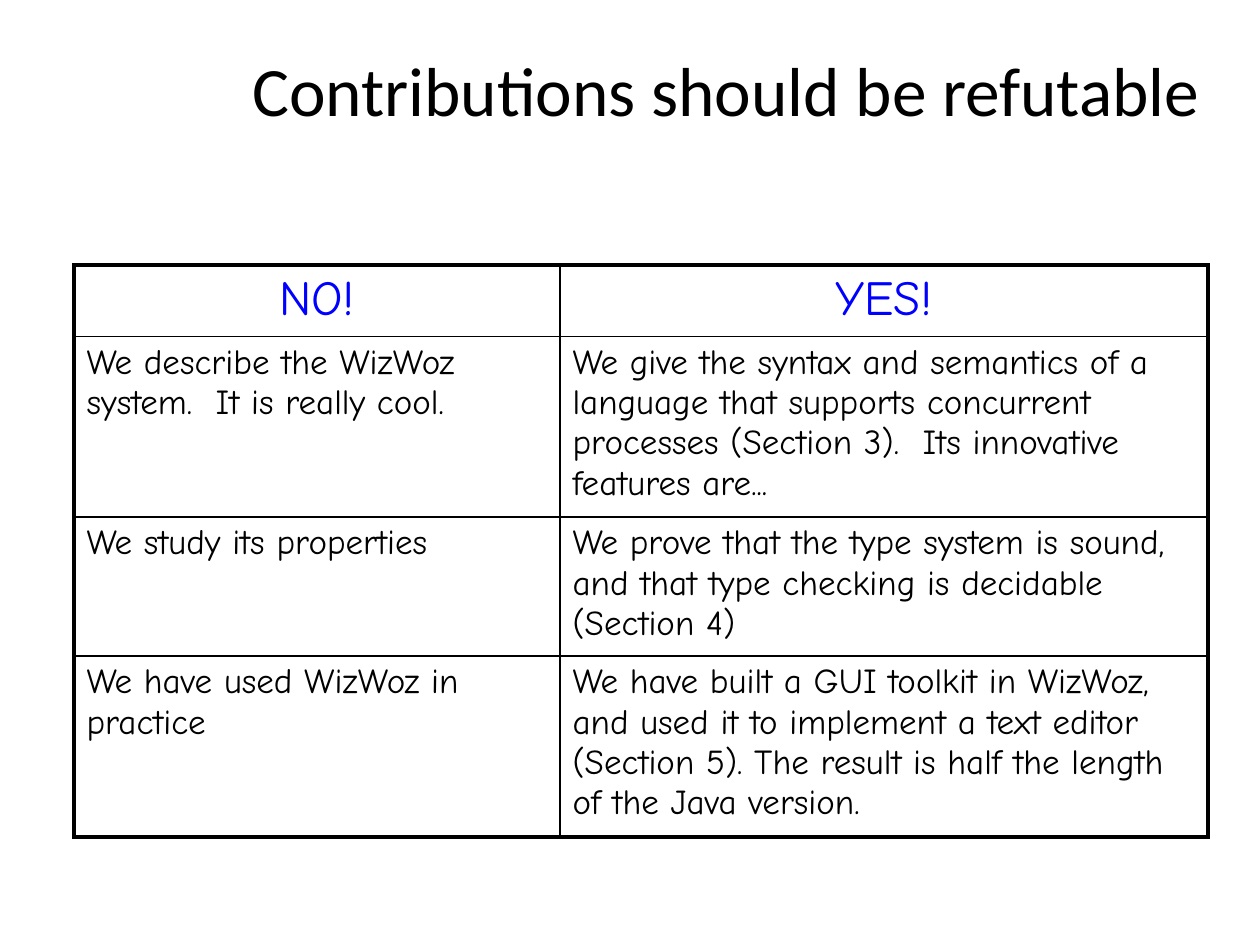
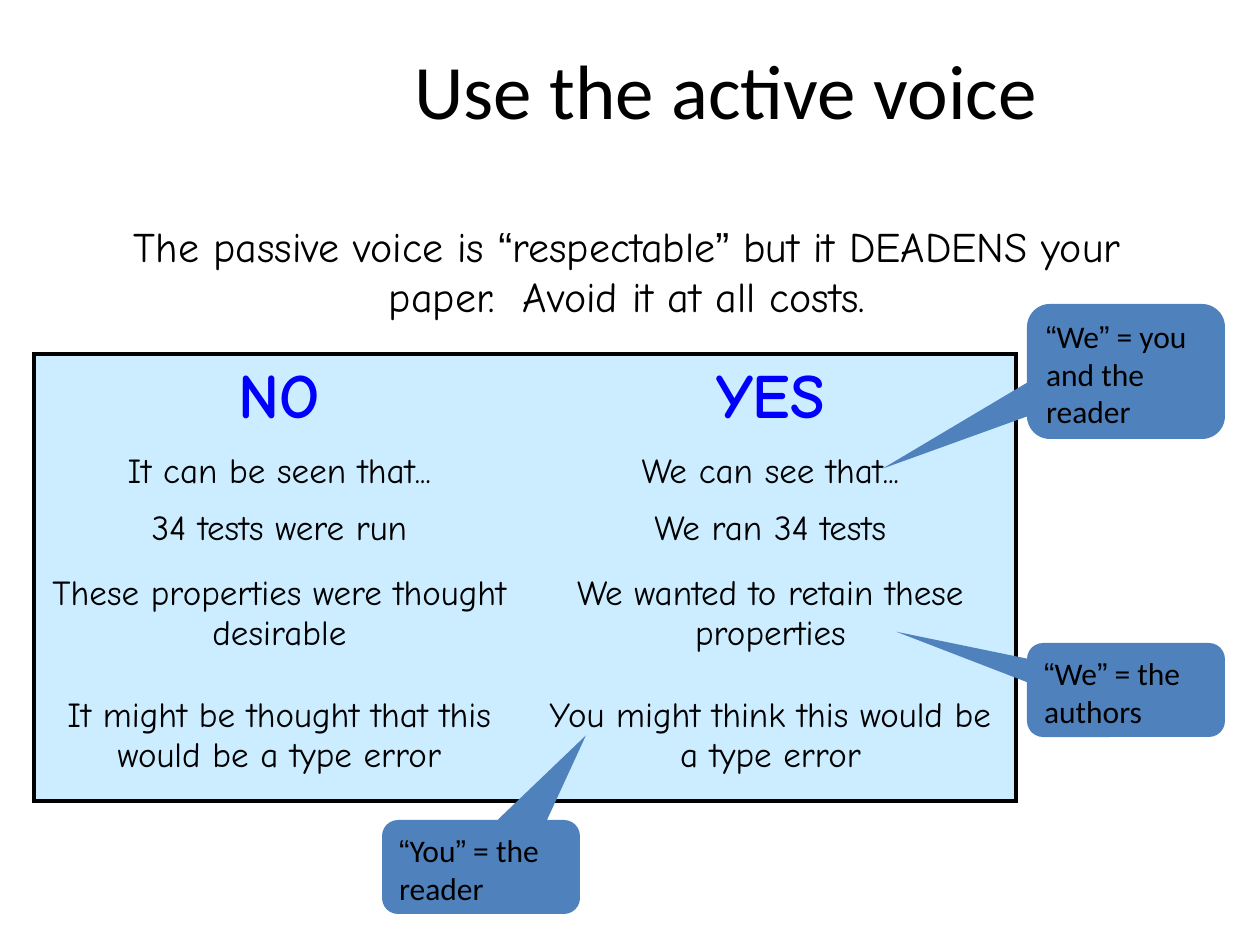
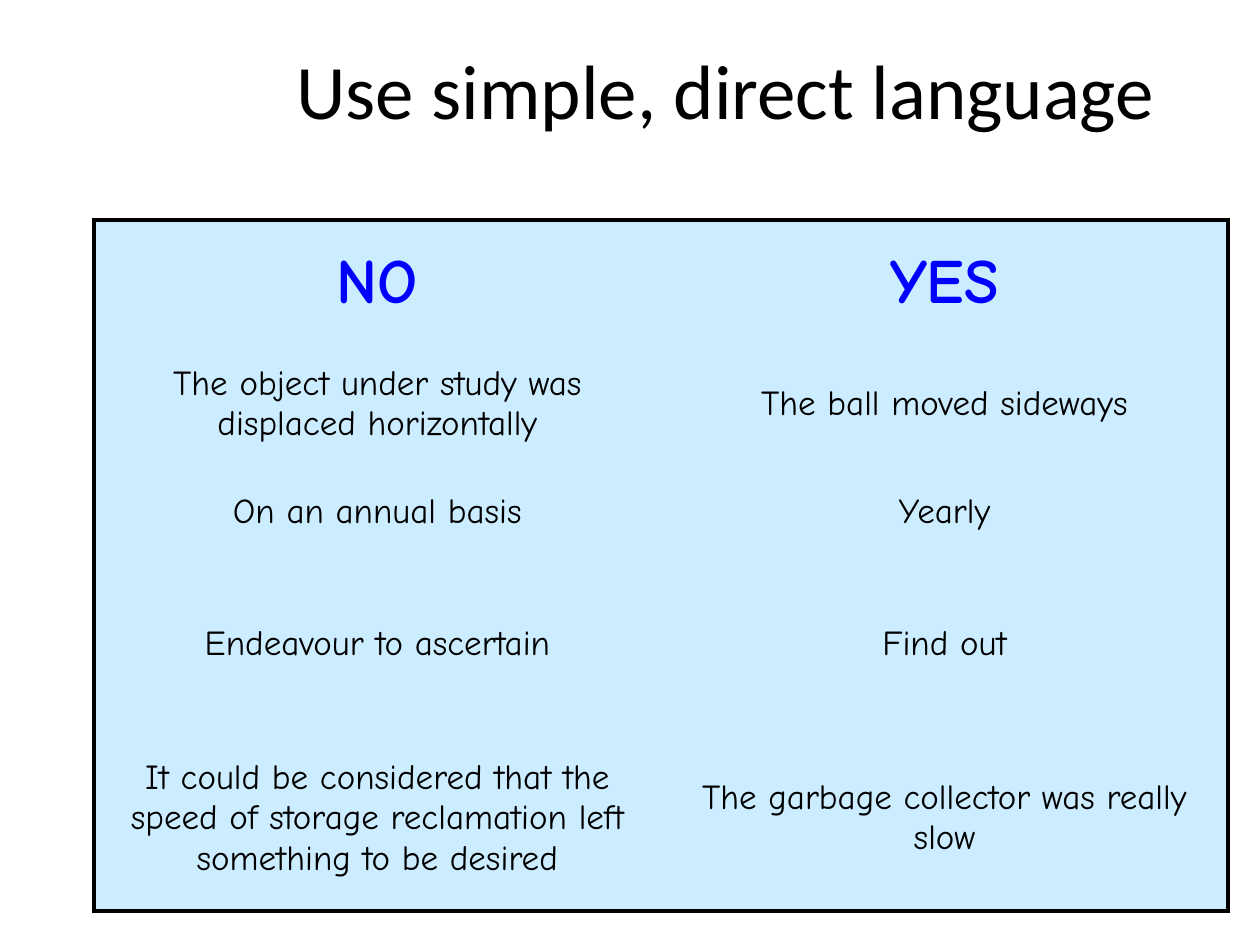
from itertools import groupby

from lxml.etree import SubElement
from pptx import Presentation
from pptx.dml.color import RGBColor
from pptx.enum.shapes import MSO_SHAPE
from pptx.enum.text import MSO_ANCHOR, PP_ALIGN
from pptx.oxml.ns import qn
from pptx.util import Pt

PX = 914400 / 126
BLACK = RGBColor(0x00, 0x00, 0x00)
HEADING_BLUE = RGBColor(0x00, 0x00, 0xFF)
PALE_BLUE = RGBColor(0xCC, 0xEC, 0xFF)
CALLOUT_BLUE = RGBColor(0x4F, 0x81, 0xBD)

TITLE_FONT = "Calibri"
BODY_FONT = "Comic Neue"
QUOTE_FONT = "Arial"
QUOTES = "“”"

TITLE_BOX = (189, 10, 1074, 158)
THICK, THIN = 2.25, 1

REFUTABLE_ROWS = [
    ("NO!", "YES!"),
    ("We describe the WizWoz system.  It is really cool.",
     "We give the syntax and semantics of a language that supports concurrent "
     "processes (Section 3).  Its innovative features are..."),
    ("We study its properties",
     "We prove that the type system is sound, and that type checking is "
     "decidable (Section 4)"),
    ("We have used WizWoz in practice",
     "We have built a GUI toolkit in WizWoz, and used it to implement a text "
     "editor (Section 5). The result is half the length of the Java version."),
]
VOICE_ROWS = [
    ("NO", "YES"),
    ("It can be seen that...", "We can see that..."),
    ("34 tests were run", "We ran 34 tests"),
    ("These properties were thought desirable",
     "We wanted to retain these properties"),
    ("It might be thought that this would be a type error",
     "You might think this would be a type error"),
]
LANGUAGE_ROWS = [
    ("NO", "YES"),
    ("The object under study was displaced horizontally",
     "The ball moved sideways"),
    ("On an annual basis", "Yearly"),
    ("Endeavour to ascertain", "Find out"),
    ("It could be considered that the speed of storage reclamation left "
     "something to be desired",
     "The garbage collector was really slow"),
]
# box, adjustments of the tip and corner, text
CALLOUTS = [
    ((1027, 304, 198, 135), (-1.23, 0.72, 0.17), "“We” = you and the reader"),
    ((1027, 643, 198, 94), (-1.16, -0.62, 0.17), "“We” = the authors"),
    ((382, 820, 198, 94), (0.53, -1.4, 0.17), "“You” = the reader"),
]


def px(n):
    return round(n * PX)


def emu(box):
    return [px(n) for n in box]


def style_run(r, font, size, color=BLACK, bold=False):
    r.font.name = font
    r.font.size = Pt(size)
    r.font.color.rgb = color
    r.font.bold = bold


def add_quoted(p, text, font, size):
    """Write text as runs, with the curly quotes in their own font."""
    for is_quote, chars in groupby(text, lambda ch: ch in QUOTES):
        r = p.add_run()
        r.text = "".join(chars)
        style_run(r, QUOTE_FONT if is_quote else font, size)


def add_textbox(slide, box, anchor):
    tf = slide.shapes.add_textbox(*emu(box)).text_frame
    tf.word_wrap = True
    tf.vertical_anchor = anchor
    p = tf.paragraphs[0]
    p.alignment = PP_ALIGN.CENTER
    return p


def add_title(slide, text, size=44):
    p = add_textbox(slide, TITLE_BOX, MSO_ANCHOR.MIDDLE)
    p.text = text
    style_run(p.runs[0], TITLE_FONT, size)


def set_borders(cell, widths):
    """Draw the left, right, top and bottom borders; a width of 0 hides one."""
    tc_pr = cell._tc.get_or_add_tcPr()
    for i, (side, width) in enumerate(zip("LRTB", widths)):
        ln = SubElement(tc_pr, qn(f"a:ln{side}"), w=str(int(Pt(width))))
        if width:
            fill = SubElement(ln, qn("a:solidFill"))
            SubElement(fill, qn("a:srgbClr"), val=str(BLACK))
        else:
            SubElement(ln, qn("a:noFill"))
        tc_pr.insert(i, ln)


def add_comparison(slide, left, top, cols, heights, rows, heading_size,
                   heading_bold=True, fill=PALE_BLUE, inner=0,
                   body_align=PP_ALIGN.CENTER, anchor=MSO_ANCHOR.MIDDLE):
    """Add a NO/YES table with a thick frame and inner lines of width inner."""
    box = emu((left, top, sum(cols), sum(heights)))
    table = slide.shapes.add_table(len(rows), len(cols), *box).table
    table.first_row = table.horz_banding = False
    for column, width in zip(table.columns, cols):
        column.width = px(width)
    for row, height in zip(table.rows, heights):
        row.height = px(height)

    last_row, last_col = len(rows) - 1, len(cols) - 1
    for i, texts in enumerate(rows):
        for j, text in enumerate(texts):
            cell = table.cell(i, j)
            cell.vertical_anchor = anchor
            if fill is None:
                cell.fill.background()
            else:
                cell.fill.solid()
                cell.fill.fore_color.rgb = fill
            on_frame = (j == 0, j == last_col, i == 0, i == last_row)
            set_borders(cell, [THICK if edge else inner for edge in on_frame])
            p = cell.text_frame.paragraphs[0]
            p.text = text
            if i == 0:
                p.alignment = PP_ALIGN.CENTER
                style_run(p.runs[0], BODY_FONT, heading_size, HEADING_BLUE,
                          heading_bold)
            else:
                p.alignment = body_align
                style_run(p.runs[0], BODY_FONT, 20)


def add_callout(slide, box, adjustments, text):
    sp = slide.shapes.add_shape(MSO_SHAPE.ROUNDED_RECTANGULAR_CALLOUT, *emu(box))
    for i, value in enumerate(adjustments):
        sp.adjustments[i] = value
    sp.shadow.inherit = False
    sp.fill.solid()
    sp.fill.fore_color.rgb = CALLOUT_BLUE
    sp.line.fill.background()
    tf = sp.text_frame
    tf.word_wrap = True
    tf.vertical_anchor = MSO_ANCHOR.TOP
    p = tf.paragraphs[0]
    p.alignment = PP_ALIGN.LEFT
    add_quoted(p, text, TITLE_FONT, 18)


def build_refutable(slide):
    add_title(slide, "Contributions should be refutable", 39.6)
    add_comparison(slide, 74, 265, (486, 648), (69, 174, 139, 174),
                   REFUTABLE_ROWS, 28, heading_bold=False, fill=None,
                   inner=THIN, body_align=PP_ALIGN.LEFT, anchor=MSO_ANCHOR.TOP)


def build_active_voice(slide):
    add_title(slide, "Use the active voice")
    add_comparison(slide, 34, 354, (491, 491), (85, 60, 53, 115, 129),
                   VOICE_ROWS, 36)
    p = add_textbox(slide, (74, 214, 1106, 113), MSO_ANCHOR.TOP)
    add_quoted(p, "The passive voice is “respectable” but it DEADENS your "
                  "paper.  Avoid it at all costs.", BODY_FONT, 24)
    for box, adjustments, text in CALLOUTS:
        add_callout(slide, box, adjustments, text)


def build_simple_language(slide):
    add_title(slide, "Use simple, direct language")
    add_comparison(slide, 94, 220, (567, 567), (126, 116, 100, 164, 185),
                   LANGUAGE_ROWS, 36)


def main():
    prs = Presentation()
    prs.slide_width, prs.slide_height = emu((1260, 945))
    for build in (build_refutable, build_active_voice, build_simple_language):
        build(prs.slides.add_slide(prs.slide_layouts[6]))
    prs.save("out.pptx")


if __name__ == "__main__":
    main()
